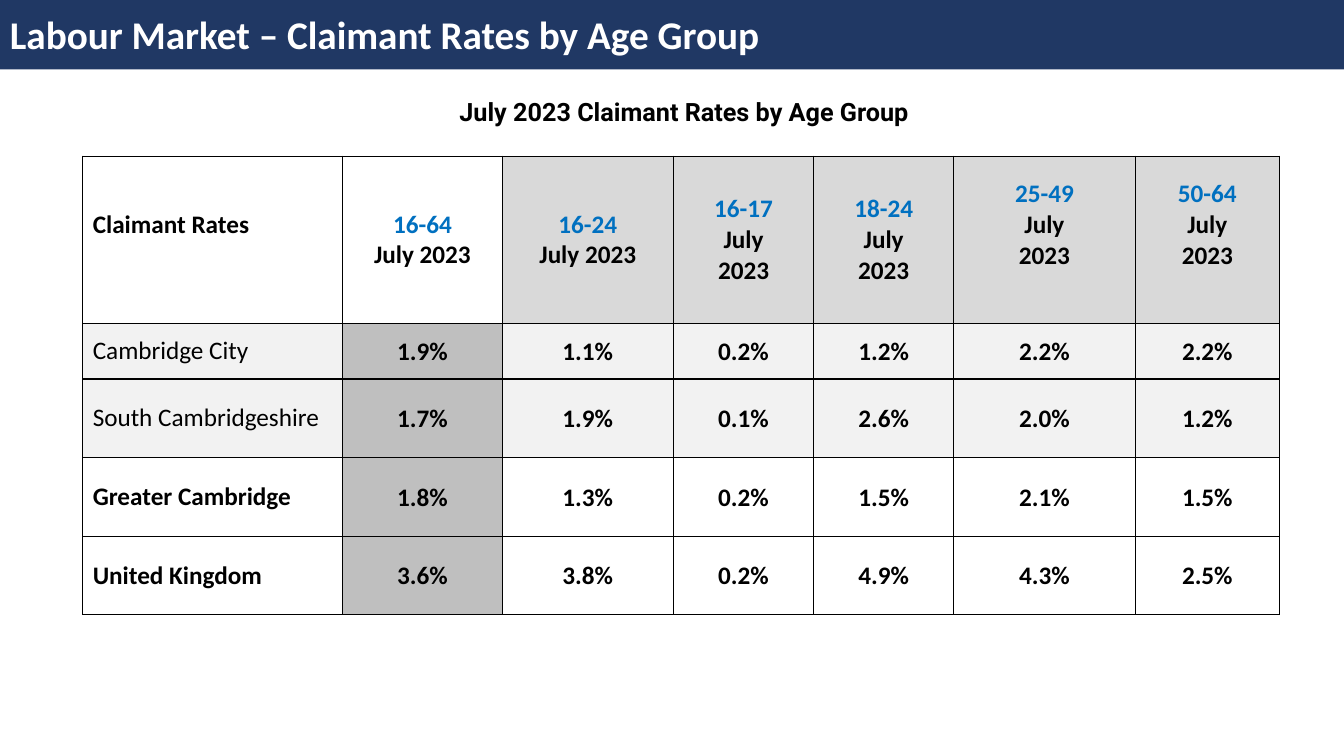
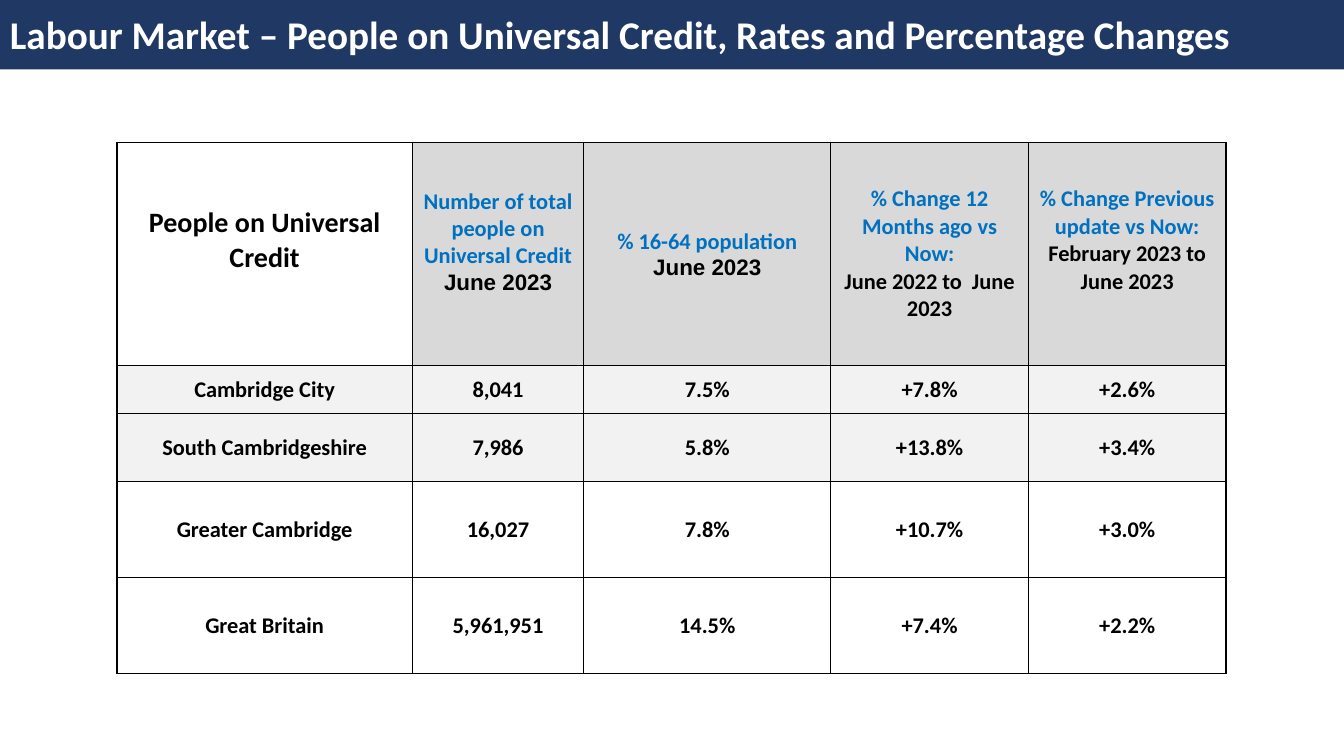
from lxml.etree import SubElement
from pptx import Presentation
from pptx.dml.color import RGBColor
from pptx.enum.shapes import MSO_SHAPE
from pptx.enum.text import MSO_ANCHOR, PP_ALIGN
from pptx.oxml.ns import qn
from pptx.util import Inches, Pt

COLORS = {
    "navy": "203864", "blue": "0070C0", "black": "000000", "white": "FFFFFF",
    "header": "D9D9D9", "band": "F2F2F2", "total": "BFBFBF",
}
LEFT, CENTER = PP_ALIGN.LEFT, PP_ALIGN.CENTER


def write(frame, paragraphs, size=18, bold=True, align=CENTER, font="Calibri", color="black"):
    """Fill a text frame; a paragraph is a string or a list of (text, color, font) runs."""
    frame.word_wrap = True
    for index, runs in enumerate(paragraphs):
        paragraph = frame.add_paragraph() if index else frame.paragraphs[0]
        paragraph.alignment = align
        if isinstance(runs, str):
            runs = [(runs, color, font)]
        for text, run_color, run_font in runs:
            run = paragraph.add_run()
            run.text = text
            run.font.size, run.font.bold, run.font.name = Pt(size), bold, run_font
            run.font.color.rgb = RGBColor.from_string(COLORS[run_color])


def style_cell(cell, fill):
    """Centre the cell vertically, fill it and draw a thin black line on each side."""
    cell.vertical_anchor = MSO_ANCHOR.MIDDLE
    cell.fill.solid()
    cell.fill.fore_color.rgb = RGBColor.from_string(COLORS[fill])
    properties = cell._tc.get_or_add_tcPr()
    for position, side in enumerate(("lnL", "lnR", "lnT", "lnB")):
        line = SubElement(properties, qn(f"a:{side}"), w=str(Pt(1)))
        color = SubElement(SubElement(line, qn("a:solidFill")), qn("a:srgbClr"))
        color.set("val", COLORS["black"])
        properties.insert(position, line)  # lines come before the fill


def blue(text):
    return [(text, "blue", "Calibri")]


june_2023 = ("June 2023", "black", "Arial")

# A header is its paragraphs and the extra space below them, in inches.
pages = [
    {
        "title": "Labour Market – Claimant Rates by Age Group",
        "subtitle": "July 2023 Claimant Rates by Age Group",
        "at": (0.82, 1.55),
        "columns": [2.58, 1.58, 1.7, 1.39, 1.39, 1.8, 1.43],
        "rows": [1.66, 0.55, 0.78, 0.78, 0.78],
        "size": 18, "corner_size": 18, "label_align": LEFT,
        "plain_labels": True, "total_column": 1,
        "headers": [
            (["Claimant Rates"], 0.3),
            ([blue("16-64"), "July 2023"], 0),
            ([blue("16-24"), "July 2023"], 0),
            ([blue("16-17"), "July", "2023"], 0),
            ([blue("18-24"), "July", "2023"], 0),
            ([blue("25-49"), "July", "2023"], 0.3),
            ([blue("50-64"), "July", "2023"], 0.3),
        ],
        "body": [
            ["Cambridge City", "1.9%", "1.1%", "0.2%", "1.2%", "2.2%", "2.2%"],
            ["South Cambridgeshire", "1.7%", "1.9%", "0.1%", "2.6%", "2.0%", "1.2%"],
            ["Greater Cambridge", "1.8%", "1.3%", "0.2%", "1.5%", "2.1%", "1.5%"],
            ["United Kingdom", "3.6%", "3.8%", "0.2%", "4.9%", "4.3%", "2.5%"],
        ],
    },
    {
        "title": "Labour Market – People on Universal Credit, Rates and Percentage Changes",
        "subtitle": None,
        "at": (1.16, 1.41),
        "columns": [2.93, 1.7, 2.45, 1.96, 1.96],
        "rows": [2.22, 0.47, 0.68, 0.95, 0.95],
        "size": 16, "corner_size": 20, "label_align": CENTER,
        "plain_labels": False, "total_column": None,
        "headers": [
            (["People on Universal Credit"], 0.27),
            ([blue("Number of total people on Universal Credit ") + [june_2023]], 0.25),
            ([blue("% 16-64 population"), [june_2023]], 0),
            ([blue("% Change 12 Months ago vs Now:"), "June 2022 to  June 2023"], 0),
            ([blue("% Change Previous update vs Now:"), "February 2023 to June 2023"], 0.27),
        ],
        "body": [
            ["Cambridge City", "8,041", "7.5%", "+7.8%", "+2.6%"],
            ["South Cambridgeshire", "7,986", "5.8%", "+13.8%", "+3.4%"],
            ["Greater Cambridge", "16,027", "7.8%", "+10.7%", "+3.0%"],
            ["Great Britain", "5,961,951", "14.5%", "+7.4%", "+2.2%"],
        ],
    },
]

deck = Presentation()
deck.slide_width, deck.slide_height = Inches(13.33), Inches(7.5)

for page in pages:
    shapes = deck.slides.add_slide(deck.slide_layouts[6]).shapes

    band = shapes.add_shape(MSO_SHAPE.RECTANGLE, 0, Inches(-0.02), deck.slide_width, Inches(0.71))
    band.shadow.inherit = False
    band.fill.solid()
    band.fill.fore_color.rgb = RGBColor.from_string(COLORS["navy"])
    band.line.fill.background()
    band.text_frame.vertical_anchor = MSO_ANCHOR.MIDDLE
    write(band.text_frame, [page["title"]], size=28, align=LEFT, color="white")

    if page["subtitle"]:
        subtitle = shapes.add_textbox(Inches(2.17), Inches(0.91), Inches(9.23), Inches(0.4))
        write(subtitle.text_frame, [page["subtitle"]], font="Roboto")

    left, top = page["at"]
    widths, heights = page["columns"], page["rows"]
    table = shapes.add_table(
        len(heights), len(widths), Inches(left), Inches(top),
        Inches(sum(widths)), Inches(sum(heights))).table
    table.first_row = table.horz_banding = False
    for column, width in zip(table.columns, widths):
        column.width = Inches(width)
    for row, height in zip(table.rows, heights):
        row.height = Inches(height)

    for c, (paragraphs, space_below) in enumerate(page["headers"]):
        cell = table.cell(0, c)
        cell.margin_bottom = Inches(0.05 + space_below)
        style_cell(cell, "white" if c in (0, page["total_column"]) else "header")
        if c == 0:
            write(cell.text_frame, paragraphs, size=page["corner_size"], align=page["label_align"])
        else:
            write(cell.text_frame, paragraphs, size=page["size"])

    for r, values in enumerate(page["body"], start=1):
        is_district = r <= 2
        for c, value in enumerate(values):
            cell = table.cell(r, c)
            if c == page["total_column"]:
                style_cell(cell, "total")
            else:
                style_cell(cell, "band" if is_district else "white")
            if c == 0:
                write(cell.text_frame, [value], size=page["size"], align=page["label_align"],
                      bold=not (page["plain_labels"] and is_district))
            else:
                cell.margin_left = cell.margin_right = cell.margin_top = Inches(0.01)
                cell.margin_bottom = 0
                write(cell.text_frame, [value], size=page["size"])

deck.save("out.pptx")
